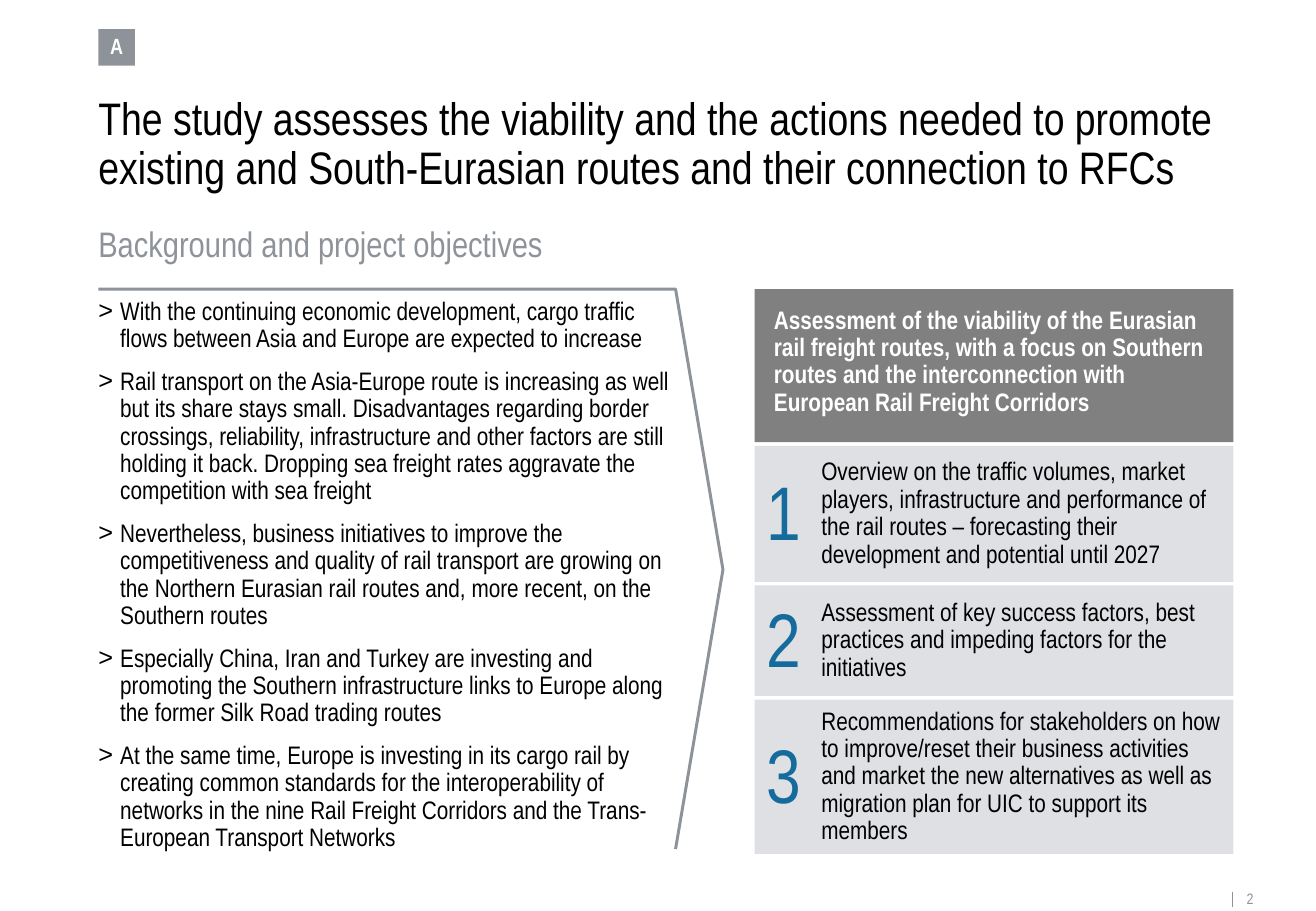
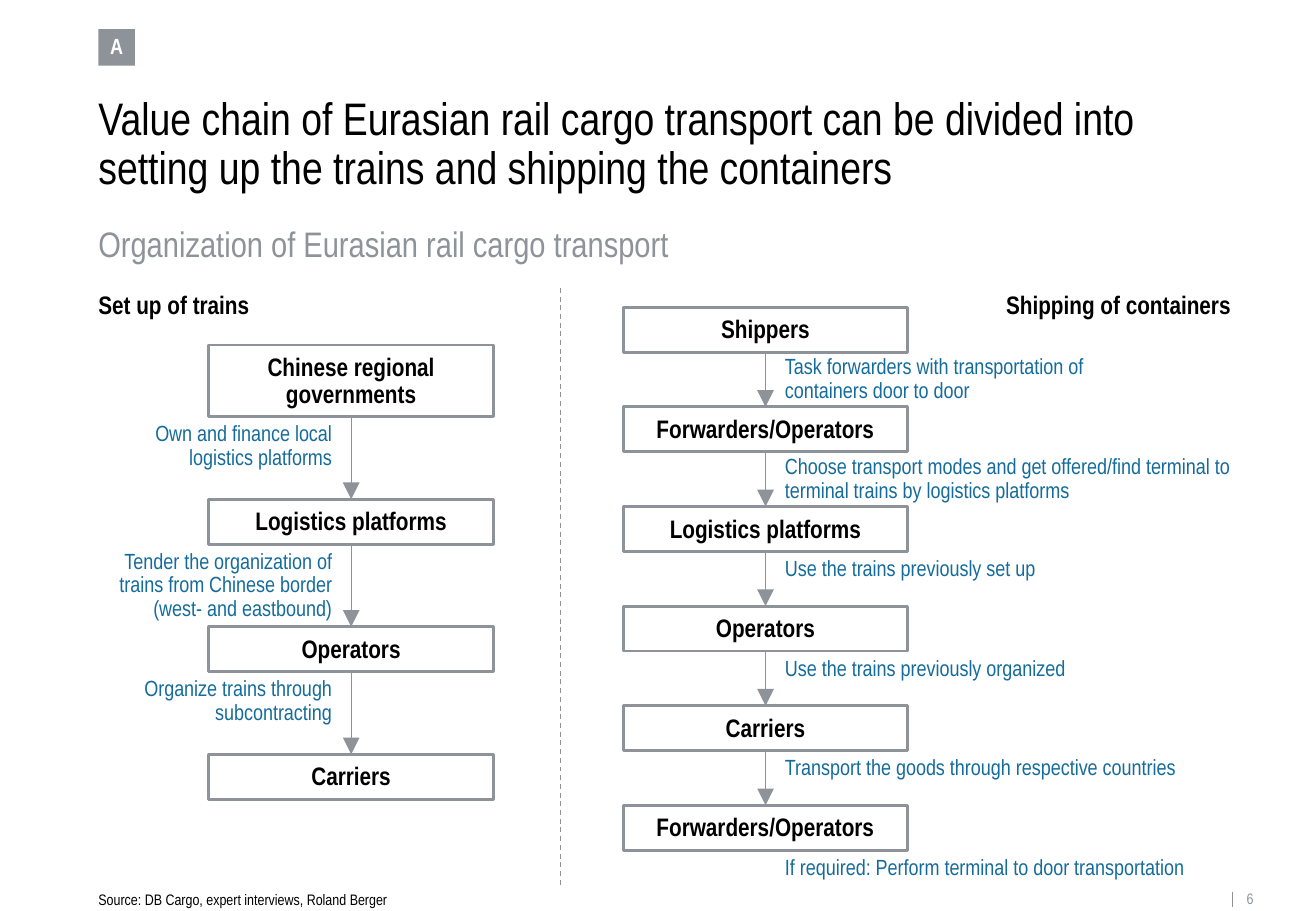
from dataclasses import dataclass
from typing import Optional

import pptx
import pptx.dml.color
import pptx.enum.dml
import pptx.enum.shapes
import pptx.enum.text
import pptx.oxml
import pptx.oxml.ns
import pptx.util
from lxml import etree
from pptx.util import Inches

COLORS = {
    "ink": "000000",
    "grey": "8D9399",
    "header": "808080",
    "panel": "DEE0E3",
    "blue": "156C9C",
    "white": "FFFFFF",
}
FONT = "Arial Narrow"
LEFT, CONTENT_WIDTH = 0.81, 9.34
ALIGN = pptx.enum.text.PP_ALIGN
ANCHOR = pptx.enum.text.MSO_ANCHOR
SIDES = ("left", "top", "right", "bottom")
BOTTOM_SITE, TOP_SITE = 2, 0


@dataclass(frozen=True)
class Area:
    left: float
    top: float
    width: float
    height: float

    def emu(self) -> tuple:
        return tuple(Inches(v) for v in (self.left, self.top, self.width, self.height))


@dataclass(frozen=True)
class Style:
    size: float
    color: str = "ink"
    bold: bool = False
    align: ALIGN = ALIGN.LEFT
    anchor: ANCHOR = ANCHOR.TOP
    insets: tuple = (0, 0, 0, 0)
    wrap: bool = True


@dataclass(frozen=True)
class Stage:
    """One box of a flow and the caption below it."""
    name: str
    caption: str = ""
    caption_width: float = 3.84
    caption_drop: float = 0.05
    height: float = 0.37


@dataclass(frozen=True)
class Flow:
    left: float
    top: float
    gap: float
    stages: tuple
    caption_on_left: bool = False


@dataclass(frozen=True)
class Objective:
    text: str
    height: float


TITLE = Style(27)
SUBTITLE = Style(21, "grey")
BADGE = Style(13, "white", True, ALIGN.CENTER, ANCHOR.MIDDLE, wrap=False)
PAGE_NUMBER = Style(9, "grey")
SOURCE = Style(9, anchor=ANCHOR.BOTTOM)
BACKGROUND = Style(15, insets=(0, 0.08, 0, 0))
GOAL = Style(15, "white", True, insets=(0.16, 0.15, 0.17, 0.08))
OBJECTIVE = Style(15, anchor=ANCHOR.MIDDLE, insets=(0.55, 0.08, 0.08, 0.08))
NUMERAL = Style(45, "blue", align=ALIGN.CENTER, anchor=ANCHOR.MIDDLE)
COLUMN_HEAD = Style(15, bold=True, anchor=ANCHOR.MIDDLE)
STAGE = Style(15, bold=True, align=ALIGN.CENTER, insets=(0.08,) * 4)
CAPTION_LEFT = Style(13, "blue", align=ALIGN.RIGHT, insets=(0, 0, 0.16, 0))
CAPTION_RIGHT = Style(13, "blue", insets=(0.16, 0, 0, 0))

BACKGROUND_POINTS = (
    "With the continuing economic development, cargo traffic flows between Asia and Europe "
    "are expected to increase",
    "Rail transport on the Asia-Europe route is increasing as well but its share stays small. "
    "Disadvantages regarding border crossings, reliability, infrastructure and other factors "
    "are still holding it back. Dropping sea freight rates aggravate the competition with sea "
    "freight",
    "Nevertheless, business initiatives to improve the competitiveness and quality of rail "
    "transport are growing on the Northern Eurasian rail routes and, more recent, on the "
    "Southern routes",
    "Especially China, Iran and Turkey are investing and promoting the Southern "
    "infrastructure links to Europe along the former Silk Road trading routes",
    "At the same time, Europe is investing in its cargo rail by creating common standards for "
    "the interoperability of networks in the nine Rail Freight Corridors and the "
    "Trans-European Transport Networks",
)
GOAL_TEXT = (
    "Assessment of the viability of the Eurasian rail freight routes, with a focus on Southern "
    "routes and the interconnection with European Rail Freight Corridors"
)
OBJECTIVES = (
    Objective("Overview on the traffic volumes, market players, infrastructure and performance "
              "of the rail routes – forecasting their development and potential until 2027", 1.12),
    Objective("Assessment of key success factors, best practices and impeding factors for the "
              "initiatives", 0.91),
    Objective("Recommendations for stakeholders on how to improve/reset their business "
              "activities and market the new alternatives as well as migration plan for UIC to "
              "support its members", 1.27),
)
TRAIN_SETUP = Flow(1.72, 2.84, 0.68, (
    Stage("Chinese regional governments", "Own and finance local logistics platforms", 1.78,
          height=0.59),
    Stage("Logistics platforms", "Tender the organization of trains from Chinese border "
          "(west- and eastbound)", 2.08),
    Stage("Operators", "Organize trains through subcontracting", 1.78),
    Stage("Carriers"),
), caption_on_left=True)
CONTAINER_SHIPPING = Flow(5.13, 2.53, 0.45, (
    Stage("Shippers", "Task forwarders with transportation of containers door to door",
          3.19, 0.03),
    Stage("Forwarders/Operators", "Choose transport modes and get offered/find terminal to "
          "terminal trains by logistics platforms", caption_drop=0.03),
    Stage("Logistics platforms", "Use the trains previously set up"),
    Stage("Operators", "Use the trains previously organized"),
    Stage("Carriers", "Transport the goods through respective countries"),
    Stage("Forwarders/Operators", "If required: Perform terminal to door transportation"),
))


def rgb(name: str) -> pptx.dml.color.RGBColor:
    return pptx.dml.color.RGBColor.from_string(COLORS[name])


def write(shape, paragraphs: tuple, style: Style) -> None:
    frame = shape.text_frame
    formats = {"word_wrap": style.wrap, "vertical_anchor": style.anchor}
    formats.update({f"margin_{s}": Inches(v) for s, v in zip(SIDES, style.insets)})
    for key, value in formats.items():
        setattr(frame, key, value)
    for index, text in enumerate(paragraphs):
        paragraph = frame.paragraphs[0] if index == 0 else frame.add_paragraph()
        paragraph.alignment, paragraph.line_spacing = style.align, 0.9
        run = paragraph.add_run()
        run.text = text
        font = {"name": FONT, "size": pptx.util.Pt(style.size), "bold": style.bold}
        for key, value in font.items():
            setattr(run.font, key, value)
        run.font.color.rgb = rgb(style.color)


def add_text(slide, area: Area, style: Style, *paragraphs: str):
    box = slide.shapes.add_textbox(*area.emu())
    write(box, paragraphs, style)
    return box


def outline(shape, color: str, width: float) -> None:
    shape.line.color.rgb = rgb(color)
    shape.line.width = pptx.util.Pt(width)


def add_box(slide, area: Area, text: str, style: Style, fill: Optional[str] = None):
    """Filled without outline, or outlined in grey when no fill is given."""
    box = slide.shapes.add_shape(pptx.enum.shapes.MSO_SHAPE.RECTANGLE, *area.emu())
    box.shadow.inherit = False
    if fill:
        box.fill.solid()
        box.fill.fore_color.rgb = rgb(fill)
        box.line.fill.background()
    else:
        box.fill.background()
        outline(box, "grey", 1.75)
    write(box, (text,), style)
    return box


def add_line(slide, x1: float, y1: float, x2: float, y2: float):
    line = slide.shapes.add_connector(
        pptx.enum.shapes.MSO_CONNECTOR.STRAIGHT, *(Inches(v) for v in (x1, y1, x2, y2)))
    outline(line, "grey", 0.75)
    etree.SubElement(line._element.spPr, pptx.oxml.ns.qn("a:effectLst"))
    return line


def add_arrow(slide, upper, lower) -> None:
    arrow = add_line(slide, 0, 0, 0, 0)
    arrow.begin_connect(upper, BOTTOM_SITE)
    arrow.end_connect(lower, TOP_SITE)
    etree.SubElement(arrow.line._get_or_add_ln(), pptx.oxml.ns.qn("a:tailEnd"),
                     type="triangle", w="lg", len="lg")


def add_bullets(box) -> None:
    for index, paragraph in enumerate(box.text_frame.paragraphs):
        paragraph.space_before = pptx.util.Pt(3 if index else 0)
        paragraph.space_after = pptx.util.Pt(6)
        properties = paragraph._p.get_or_add_pPr()
        properties.set("marL", str(Inches(0.18)))
        properties.set("indent", str(-Inches(0.18)))
        etree.SubElement(properties, pptx.oxml.ns.qn("a:buFont"), typeface="Arial")
        etree.SubElement(properties, pptx.oxml.ns.qn("a:buChar"), char=">")


def add_base_slide(deck, title: str, subtitle: str, page: int):
    """Slide with section badge, title, subtitle and page number."""
    slide = deck.slides.add_slide(deck.slide_layouts[6])
    add_box(slide, Area(LEFT, 0.24, 0.3, 0.3), "A", BADGE, "grey")
    add_text(slide, Area(LEFT, 0.79, CONTENT_WIDTH, 0.82), TITLE, title)
    add_text(slide, Area(LEFT, 1.87, CONTENT_WIDTH, 0.33), SUBTITLE, subtitle)
    add_line(slide, 10.14, 7.34, 10.14, 7.47)
    add_text(slide, Area(10.26, 7.34, 0.13, 0.14), PAGE_NUMBER, str(page))
    return slide


def add_background(slide) -> None:
    add_bullets(add_text(slide, Area(LEFT, 2.38, 4.74, 4.15), BACKGROUND, *BACKGROUND_POINTS))
    start, *rest = [(Inches(x), Inches(y)) for x, y in
                    ((LEFT, 2.38), (5.56, 2.38), (5.95, 4.69), (5.56, 6.99))]
    builder = slide.shapes.build_freeform(*start)
    builder.add_line_segments(rest, close=False)
    bracket = builder.convert_to_shape()
    bracket.shadow.inherit = False
    bracket.fill.background()
    outline(bracket, "grey", 1.75)


def add_objectives(slide) -> None:
    left, top, width, goal_height, gap = 6.21, 2.38, 3.94, 1.26, 0.03
    add_box(slide, Area(left, top, width, goal_height), GOAL_TEXT, GOAL, "header")
    top += goal_height + gap
    for number, objective in enumerate(OBJECTIVES, 1):
        add_box(slide, Area(left, top, width, objective.height), objective.text,
                OBJECTIVE, "panel")
        numeral_top = top + (objective.height - 0.72) / 2 + 0.02
        add_text(slide, Area(left + 0.01, numeral_top, 0.46, 0.72), NUMERAL, str(number))
        top += objective.height + gap


def add_flow(slide, flow: Flow) -> None:
    width = 2.34
    axis = flow.left + width / 2
    top, previous = flow.top, None
    for stage in flow.stages:
        box = add_box(slide, Area(flow.left, top, width, stage.height), stage.name, STAGE)
        if previous is not None:
            add_arrow(slide, previous, box)
        if stage.caption:
            left = axis - stage.caption_width if flow.caption_on_left else axis
            style = CAPTION_LEFT if flow.caption_on_left else CAPTION_RIGHT
            caption_top = top + stage.height + stage.caption_drop
            add_text(slide, Area(left, caption_top, stage.caption_width, 0.39), style,
                     stage.caption)
        top += stage.height + flow.gap
        previous = box


def main() -> None:
    deck = pptx.Presentation()
    deck.slide_width, deck.slide_height = Inches(10.83), Inches(7.5)

    objectives = add_base_slide(
        deck, "The study assesses the viability and the actions needed to promote existing and "
        "South-Eurasian routes and their connection to RFCs",
        "Background and project objectives", 2)
    add_background(objectives)
    add_objectives(objectives)

    value_chain = add_base_slide(
        deck, "Value chain of Eurasian rail cargo transport can be divided into setting up the "
        "trains and shipping the containers",
        "Organization of Eurasian rail cargo transport", 6)
    add_text(value_chain, Area(LEFT, 2.41, 2, 0.23), COLUMN_HEAD, "Set up of trains")
    add_text(value_chain, Area(8.28, 2.41, 2, 0.23), COLUMN_HEAD, "Shipping of containers")
    divider = add_line(value_chain, 4.61, 2.37, 4.61, 7.29)
    divider.line.dash_style = pptx.enum.dml.MSO_LINE.DASH
    for flow in (TRAIN_SETUP, CONTAINER_SHIPPING):
        add_flow(value_chain, flow)
    add_text(value_chain, Area(LEFT, 7.34, 3, 0.14), SOURCE,
             "Source: DB Cargo, expert interviews, Roland Berger")

    deck.save("out.pptx")


if __name__ == "__main__":
    main()
